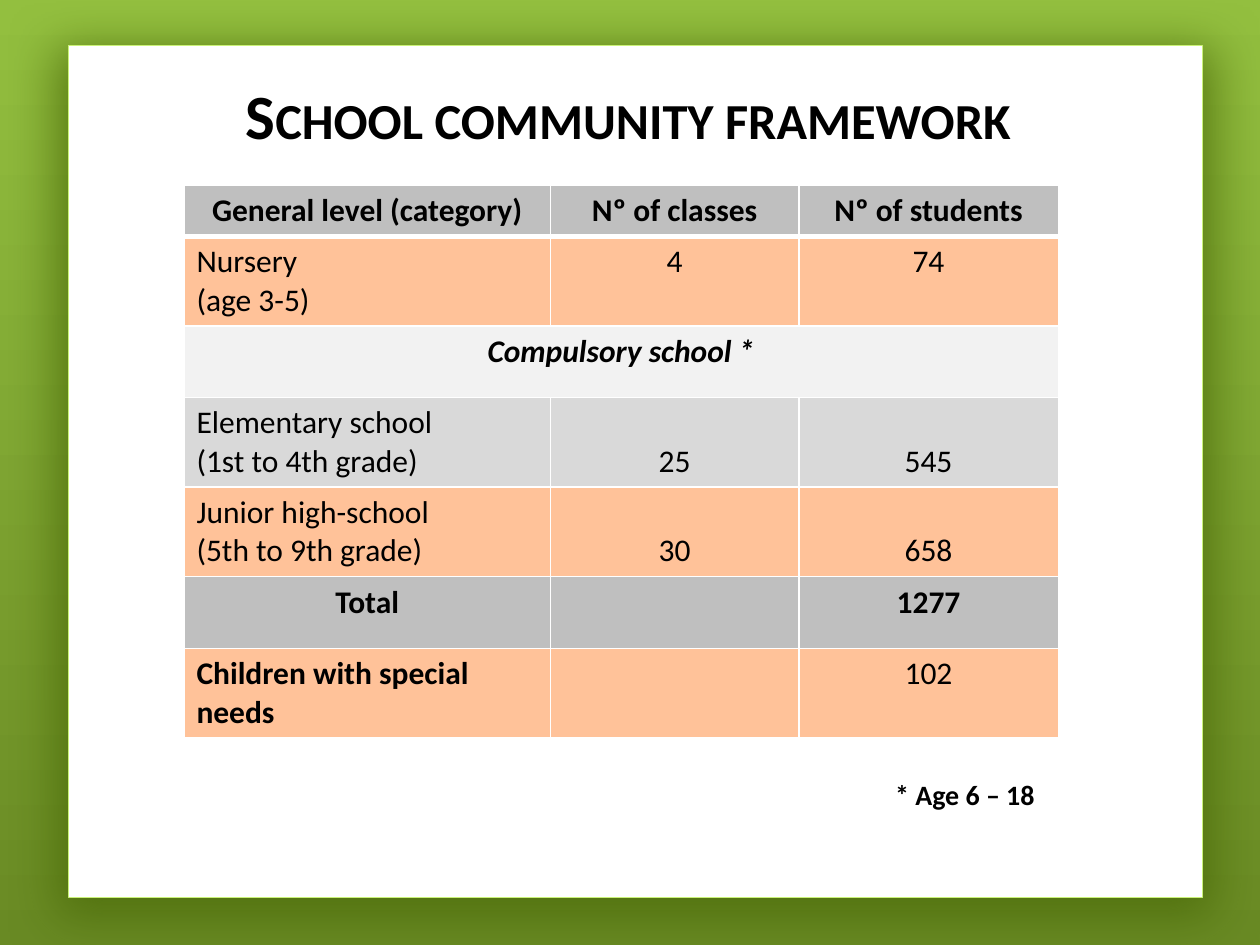
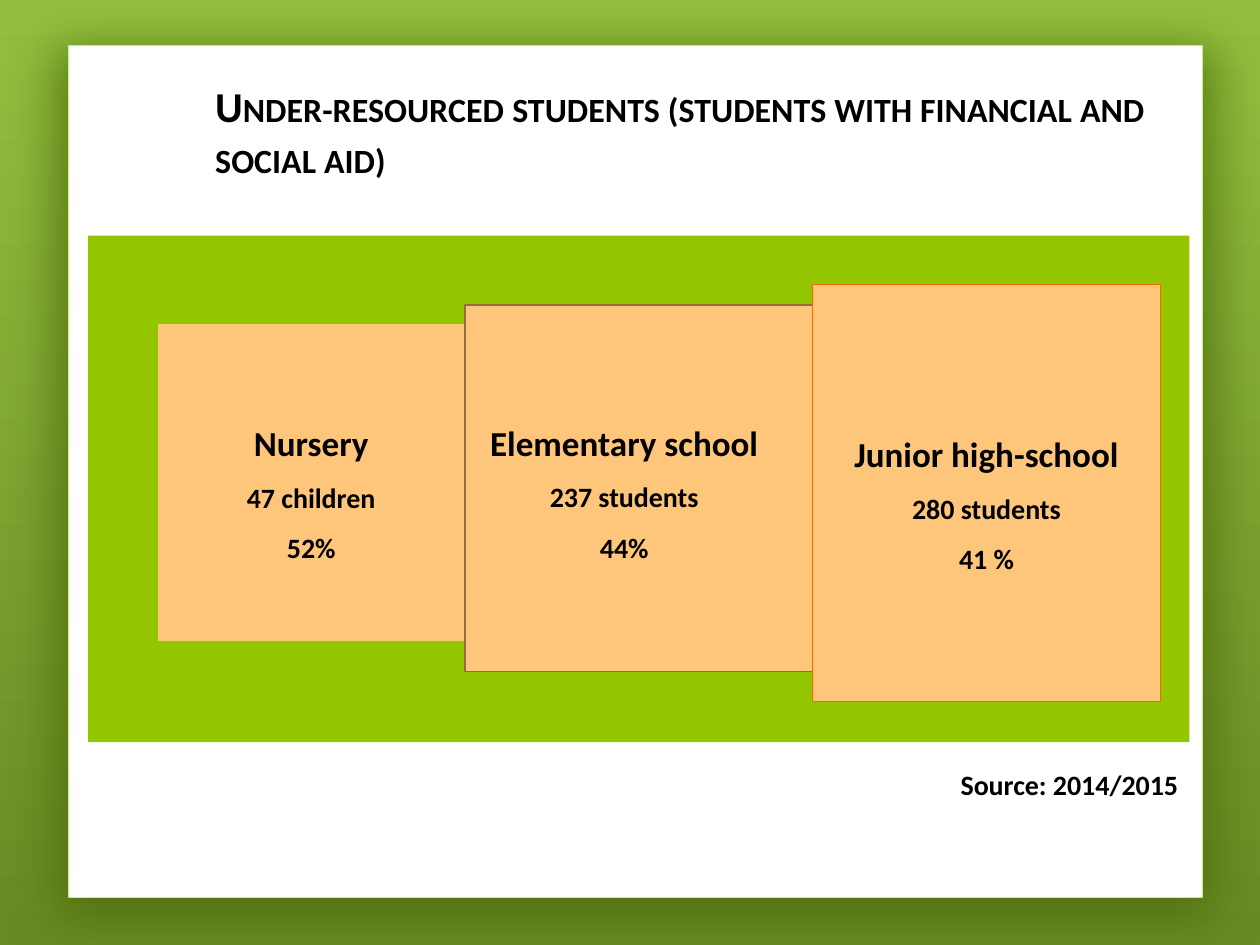
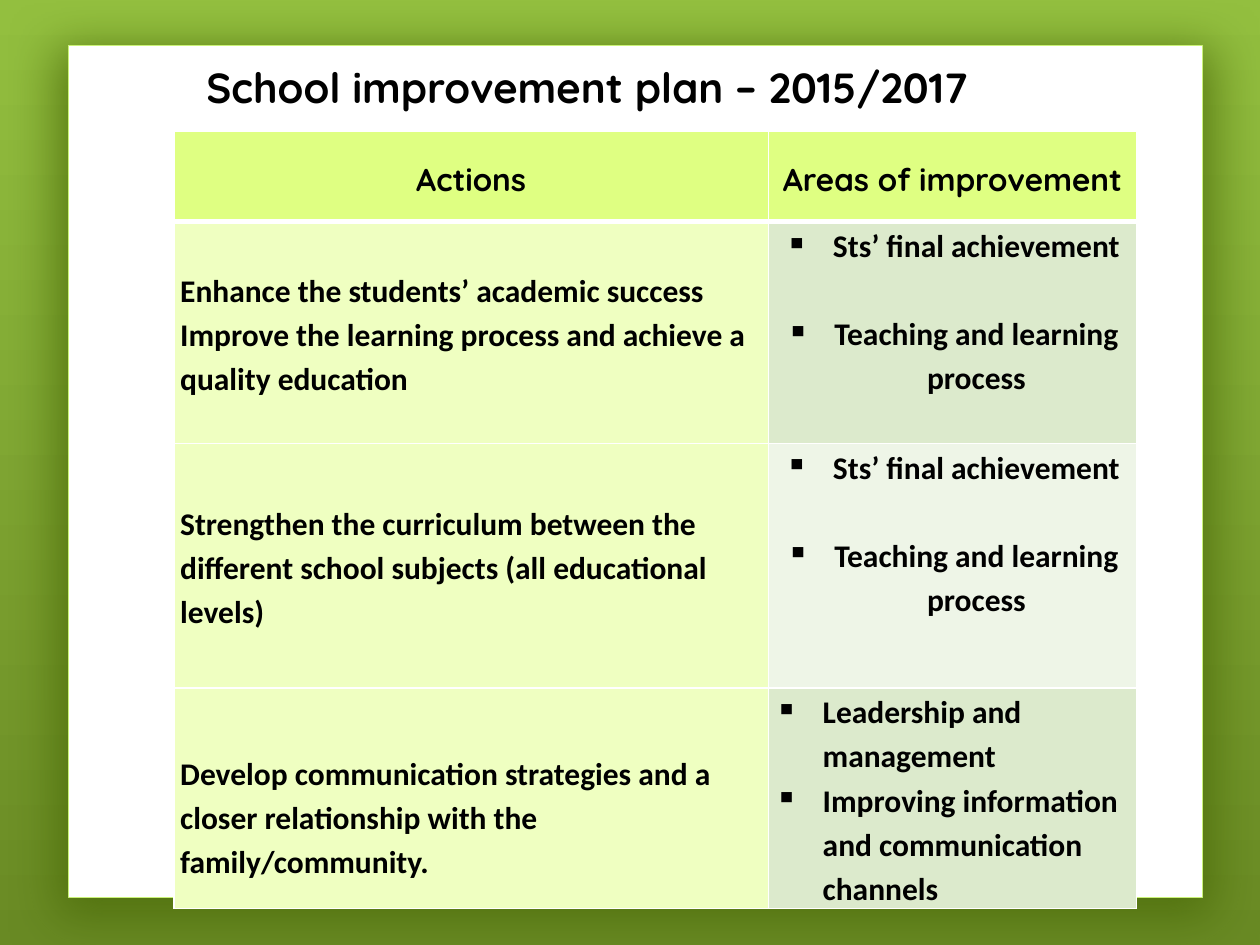
from dataclasses import dataclass

from lxml.etree import SubElement
from pptx import Presentation
from pptx.dml.color import RGBColor
from pptx.enum.shapes import MSO_SHAPE
from pptx.enum.text import MSO_ANCHOR, PP_ALIGN
from pptx.oxml.ns import qn
from pptx.util import Inches, Pt

LEFT, CENTER, RIGHT = PP_ALIGN.LEFT, PP_ALIGN.CENTER, PP_ALIGN.RIGHT
TOP, MIDDLE, BOTTOM = MSO_ANCHOR.TOP, MSO_ANCHOR.MIDDLE, MSO_ANCHOR.BOTTOM


@dataclass(frozen=True)
class Theme:
    body_font: str = "Calibri"
    display_font: str = "Quicksand"
    title_size: float = 36
    long_title_size: float = 24.3
    plan_title_size: float = 24
    heading_size: float = 20
    table_size: float = 18
    note_size: float = 16
    text: str = "000000"
    white: str = "FFFFFF"
    backdrop_top: str = "93BF3F"
    backdrop_bottom: str = "698A24"
    panel_line: str = "CAF278"
    panel_shadow: str = "4A6A08"
    band: str = "94C600"
    card: str = "FEC67A"
    elementary_line: str = "956B43"
    junior_line: str = "FF6700"
    head_gray: str = "BFBFBF"
    row_gray: str = "D9D9D9"
    pale_gray: str = "F2F2F2"
    peach: str = "FFC299"
    lime: str = "DFFF82"
    pale_lime: str = "EFFFC1"
    sage: str = "DCEACC"
    pale_sage: str = "EEF5E7"


def rgb(value):
    return RGBColor.from_string(value)


def set_all(target, values):
    for name, value in values.items():
        setattr(target, name, value)


def add_colour(parent, value, alpha=None):
    colour = SubElement(parent, qn("a:srgbClr"), val=value)
    if alpha:
        SubElement(colour, qn("a:alpha"), val=str(alpha * 1000))


class Builder:
    def __init__(self, theme):
        self.theme = theme
        self.page = None
        self.deck = Presentation()
        self.deck.slide_width, self.deck.slide_height = Inches(10), Inches(7.5)
        backdrop = self.deck.slide_master.background.fill
        backdrop.gradient()
        backdrop.gradient_angle = 270
        ends = (theme.backdrop_top, theme.backdrop_bottom)
        for stop, colour in zip(backdrop.gradient_stops, ends):
            stop.color.rgb = rgb(colour)

    def new_page(self):
        """Start a slide with the white panel and its dark halo."""
        self.page = self.deck.slides.add_slide(self.deck.slide_layouts[6])
        panel = self.rectangle((0.54, 0.36, 9, 6.76), self.theme.white,
                               self.theme.panel_line, 0.5)
        effects = panel._element.spPr.find(qn("a:effectLst"))
        shadow = SubElement(effects, qn("a:outerShdw"), blurRad=str(Inches(0.4)),
                            dist=str(Inches(0.1)), dir="5400000", sx="102000",
                            sy="102000", algn="ctr", rotWithShape="0")
        add_colour(shadow, self.theme.panel_shadow, 75)

    def rectangle(self, place, fill, line=None, width=0.75):
        box = self.page.shapes.add_shape(MSO_SHAPE.RECTANGLE, *map(Inches, place))
        box.shadow.inherit = False
        box.fill.solid()
        box.fill.fore_color.rgb = rgb(fill)
        if line:
            box.line.color.rgb = rgb(line)
            box.line.width = Pt(width)
        else:
            box.line.fill.background()
        return box

    def fill_frame(self, frame, text, align=LEFT, spacing=1.0, gap=0, bullet=None,
                   heading=None, small_caps=False, **font):
        """Fill a frame, one paragraph a line; heading is the first line's size."""
        frame.word_wrap = True
        for index, line in enumerate(text.split("\n")):
            para = frame.paragraphs[0] if index == 0 else frame.add_paragraph()
            set_all(para, {"alignment": align, "line_spacing": spacing,
                           "space_before": Pt(gap if index else 0)})
            if bullet:
                props = para._p.get_or_add_pPr()
                props.set("marL", str(Inches(0.38)))
                props.set("indent", str(-Inches(0.38)))
                SubElement(props, qn("a:buChar"), char=bullet)
            if not line:
                continue
            span = para.add_run()
            span.text = line
            values = {"name": self.theme.body_font, "bold": True, "italic": False,
                      "size": self.theme.table_size} | font
            if heading and index == 0:
                values["size"] = heading
            values["size"] = Pt(values["size"])
            set_all(span.font, values)
            span.font.color.rgb = rgb(self.theme.text)
            if small_caps:
                span._r.get_or_add_rPr().set("cap", "small")

    def text(self, place, text, anchor=TOP, **style):
        box = self.page.shapes.add_textbox(*map(Inches, place))
        self.fill_frame(box.text_frame, text, **style)
        box.text_frame.vertical_anchor = anchor

    def card(self, place, line, text, right=0.1, bottom=0.05):
        frame = self.rectangle(place, self.theme.card, line).text_frame
        self.fill_frame(frame, text, align=CENTER, spacing=1.5,
                        heading=self.theme.heading_size, size=self.theme.note_size)
        set_all(frame, {"vertical_anchor": MIDDLE, "margin_right": Inches(right),
                        "margin_bottom": Inches(bottom)})

    def table(self, left, top, widths, heights, rows, margins=None):
        """Build a table from rows of (text, fill, style) cells."""
        shape = self.page.shapes.add_table(
            len(rows), len(widths), Inches(left), Inches(top),
            Inches(sum(widths)), Inches(sum(heights)))
        table = shape.table
        set_all(table, {"first_row": False, "horz_banding": False})
        for column, width in zip(table.columns, widths):
            column.width = Inches(width)
        for index, (row, height) in enumerate(zip(rows, heights)):
            table.rows[index].height = Inches(height)
            for cell, content in zip(table.rows[index].cells, row):
                self.fill_cell(cell, *content, margins or {},
                               top_line=3 if index == 1 else 1,
                               bottom_line=1 if index else 3)
        return table

    def fill_cell(self, cell, text, fill, style, margins, top_line, bottom_line):
        style = dict(style)
        format_values = {"vertical_anchor": style.pop("anchor", TOP)}
        insets = margins | style.pop("margins", {})
        format_values |= {name: Inches(value) for name, value in insets.items()}
        set_all(cell, format_values)
        self.fill_frame(cell.text_frame, text, **style)
        props = cell._tc.get_or_add_tcPr()
        for side, width in zip("LRTB", (1, 1, top_line, bottom_line)):
            line = SubElement(props, qn(f"a:ln{side}"), w=str(Pt(width)))
            add_colour(SubElement(line, qn("a:solidFill")), self.theme.white)
        cell.fill.solid()
        cell.fill.fore_color.rgb = rgb(fill)


def community_slide(builder):
    theme = builder.theme
    builder.new_page()
    centred = {"align": CENTER}
    plain = {"bold": False}
    number = centred | plain
    low_number = number | {"anchor": BOTTOM}

    def row(fill, texts, *styles):
        return [(text, fill, style) for text, style in zip(texts, styles)]

    rows = [
        row(theme.head_gray,
            ("General level (category)", "Nº of classes", "Nº of students"),
            centred, centred, centred),
        row(theme.peach, ("Nursery\n(age 3-5)", "4", "74"), plain, number, number),
        row(theme.pale_gray, ("Compulsory school *", "", ""),
            centred | {"italic": True}, {}, {}),
        row(theme.row_gray, ("Elementary school\n(1st to 4th grade)", "25", "545"),
            plain, low_number, low_number),
        row(theme.peach, ("Junior high-school\n(5th to 9th grade)", "30", "658"),
            plain, low_number, low_number),
        row(theme.head_gray, ("Total", "", "1277"), centred, centred, centred),
        row(theme.peach, ("Children with special needs", "", "102"),
            {}, number, number),
    ]
    table = builder.table(1.46, 1.47, (2.91, 1.97, 2.06),
                          (0.4, 0.71, 0.57, 0.71, 0.71, 0.57, 0.71), rows)
    table.cell(2, 0).merge(table.cell(2, 2))
    builder.text((1.85, 0.6, 7.59, 0.66), "School community framework",
                 anchor=BOTTOM, size=theme.title_size, small_caps=True)
    builder.text((6.42, 6.12, 1.89, 0.37), "* Age 6 – 18",
                 align=RIGHT, size=theme.note_size)


def aid_slide(builder):
    theme = builder.theme
    builder.new_page()
    builder.text((1.61, 0.52, 7.72, 0.97),
                 "Under-resourced students (students with financial and social aid)",
                 anchor=BOTTOM, size=theme.long_title_size, small_caps=True)
    builder.rectangle((0.7, 1.87, 8.74, 4.02), theme.band)
    builder.card((1.25, 2.57, 2.44, 2.52), theme.band,
                 "Nursery\n47 children\n52%")
    builder.card((3.69, 2.42, 2.76, 2.91), theme.elementary_line,
                 "Elementary school\n237 students\n44%", right=0.33, bottom=0.15)
    builder.card((6.45, 2.26, 2.76, 3.31), theme.junior_line,
                 "Junior high-school\n280 students\n41 %")
    builder.text((0.74, 6.04, 8.71, 0.37), "Source: 2014/2015",
                 align=RIGHT, size=theme.note_size)


def plan_slide(builder):
    theme = builder.theme
    builder.new_page()
    header = {"align": CENTER, "anchor": MIDDLE, "spacing": 1.15,
              "name": theme.display_font}
    action = {"anchor": MIDDLE, "spacing": 1.15}
    lowered = action | {"margins": {"margin_top": 0.28}}
    areas = {"spacing": 1.15, "bullet": "▪"}
    centred_areas = areas | {"align": CENTER, "gap": 25}
    achievement = "Sts’ final achievement\nTeaching and learning process"
    rows = [
        [("Actions", theme.lime, header),
         ("Areas of improvement", theme.lime, header)],
        [("Enhance the students’ academic success\n"
          "Improve the learning process and achieve a quality education",
          theme.pale_lime, action),
         (achievement, theme.sage, centred_areas)],
        [("Strengthen the curriculum between the different school subjects "
          "(all educational levels)", theme.pale_lime, action),
         (achievement, theme.pale_sage, centred_areas)],
        [("Develop communication strategies and a closer relationship with the "
          "family/community.", theme.pale_lime, lowered),
         ("Leadership and management\n"
          "Improving information and communication channels",
          theme.sage, areas)],
    ]
    margins = {"margin_left": 0.05, "margin_right": 0.05,
               "margin_top": 0, "margin_bottom": 0}
    builder.table(1.38, 1.04, (4.72, 2.92), (0.72, 1.76, 1.94, 1.75),
                  rows, margins)
    builder.text((1.54, 0.44, 6.46, 0.5), "School improvement plan – 2015/2017",
                 name=theme.display_font, size=theme.plan_title_size)


def main():
    builder = Builder(Theme())
    community_slide(builder)
    aid_slide(builder)
    plan_slide(builder)
    builder.deck.save("out.pptx")


if __name__ == "__main__":
    main()
